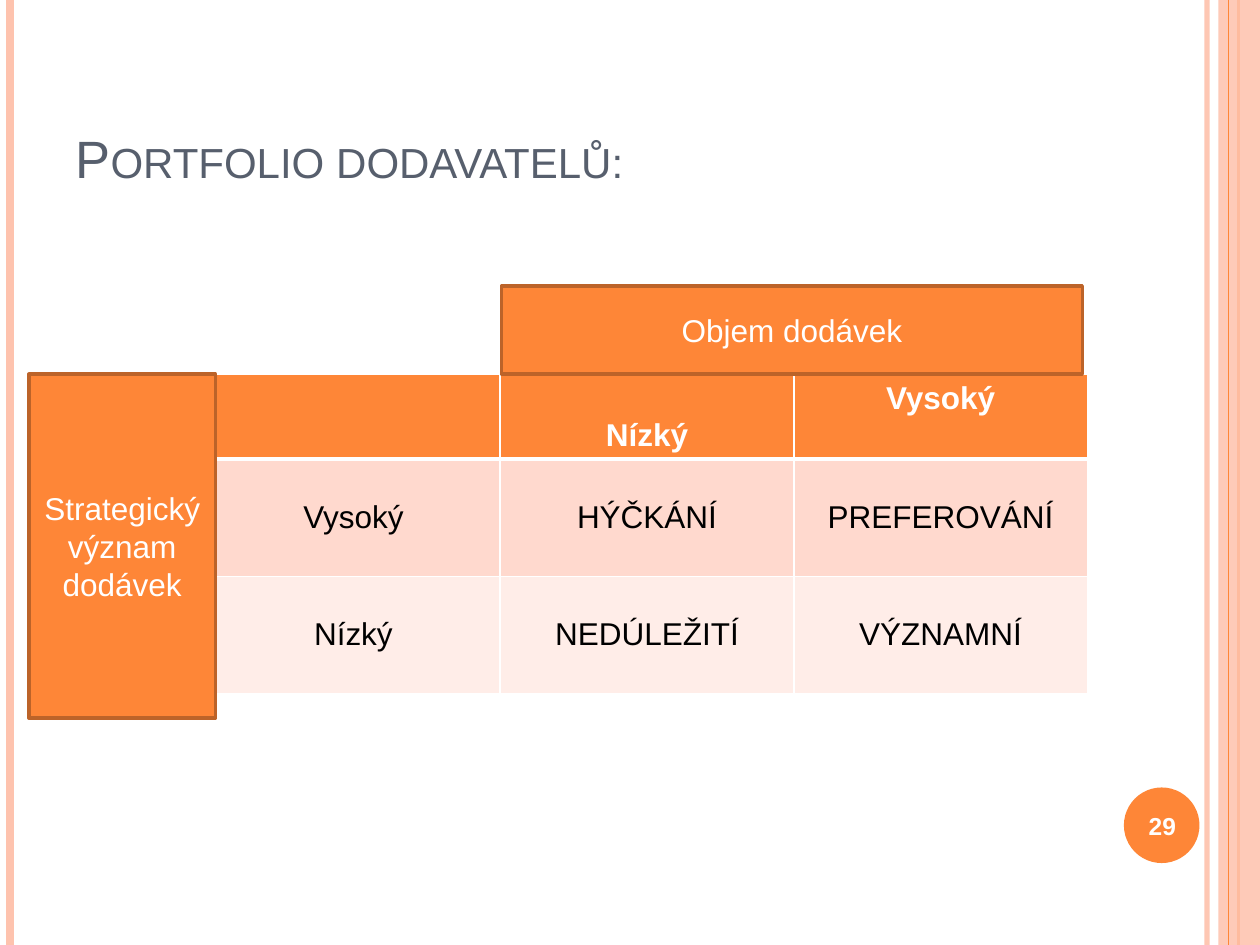
"""Build the supplier portfolio slide with its matrix and decorated margins."""
from lxml import etree
from pptx import Presentation
from pptx import util as u
from pptx.dml.color import RGBColor
from pptx.enum import shapes, text
from pptx.oxml.ns import qn

ORANGE = RGBColor(0xFE, 0x86, 0x37)
PEACH = RGBColor(0xFE, 0xC3, 0xAE)
BROWN = RGBColor(0xBC, 0x63, 0x29)
SLATE = RGBColor(0x57, 0x5F, 0x6D)
WHITE = RGBColor(0xFF, 0xFF, 0xFF)
BLACK = RGBColor(0, 0, 0)
BANDS = [ORANGE, RGBColor(0xFF, 0xD9, 0xCE), RGBColor(0xFF, 0xED, 0xE8)]

SLIDE_WIDTH, SLIDE_HEIGHT = 720, 540
TITLE = "Portfolio dodavatelů:"
MATRIX = [
    ["", "Nízký", "Vysoký"],
    ["Vysoký", "HÝČKÁNÍ", "PREFEROVÁNÍ"],
    ["Nízký", "NEDÚLEŽITÍ", "VÝZNAMNÍ"],
]
AXES = [
    ("Objem dodávek", (286.56, 163.44, 331.92, 50.4)),
    ("Strategický význam dodávek", (16.56, 213.84, 106.56, 196.56)),
]
BACK_STRIPES = [(689.76, PEACH, 3, 93), (5.76, PEACH, 4.5, 100), (707.76, ORANGE, 1.5, 100)]
FRONT_STRIPES = [(702, ORANGE, 0.75, 100)]
BAND = (696.24, 0, 23.76, SLIDE_HEIGHT)
BADGE = (642.24, 450, 43.2, 43.2)
PAGE_NUMBER = ("29", (640.08, 451.44, 48.24, 41.04))
TABLE_LEFT, TABLE_TOP, COLUMN_WIDTH = 118.08, 213.84, 167.76
ROW_HEIGHTS = [48.5, 67, 67]
TABLE_TEXT = {"size": u.Pt(18), "name": "Arial"}
AXIS_TEXT = {**TABLE_TEXT, "color": WHITE}


def points(values):
    return [u.Pt(value) for value in values]


def set_alpha(element, percent):
    color = element.find(".//" + qn("a:srgbClr"))
    etree.SubElement(color, qn("a:alpha")).set("val", str(percent * 1000))


def write(frame, words, style, align=text.PP_ALIGN.CENTER, anchor=text.MSO_ANCHOR.MIDDLE):
    frame.word_wrap = True
    frame.vertical_anchor = anchor
    para = frame.paragraphs[0]
    para.alignment = align
    span = para.add_run()
    span.text = words
    for name, value in style.items():
        if name == "color":
            span.font.color.rgb = value
        else:
            setattr(span.font, name, value)
    return span


def add_stripe(page, x, color, width, alpha):
    stripe = page.shapes.add_connector(
        shapes.MSO_CONNECTOR.STRAIGHT, *points((x, 0, x, SLIDE_HEIGHT)))
    stripe.line.color.rgb = color
    stripe.line.width = u.Pt(width)
    properties = stripe.element.spPr
    if alpha < 100:
        set_alpha(properties, alpha)
    etree.SubElement(properties, qn("a:effectLst"))


def add_box(page, kind, place, fill, outline=None):
    box = page.shapes.add_shape(kind, *points(place))
    box.shadow.inherit = False
    box.fill.solid()
    box.fill.fore_color.rgb = fill
    if outline is None:
        box.line.fill.background()
    else:
        box.line.color.rgb = outline
        box.line.width = u.Pt(2)
    return box


def border_cell(cell, bottom):
    properties = cell._tc.get_or_add_tcPr()
    sides = {"lnL": 1, "lnR": 1, "lnT": 1, "lnB": bottom}
    for position, (side, width) in enumerate(sides.items()):
        line = etree.Element(qn("a:" + side), w=str(u.Pt(width)))
        fill = etree.SubElement(line, qn("a:solidFill"))
        etree.SubElement(fill, qn("a:srgbClr")).set("val", str(WHITE))
        properties.insert(position, line)


def add_matrix(page):
    place = (TABLE_LEFT, TABLE_TOP, COLUMN_WIDTH * len(MATRIX[0]), sum(ROW_HEIGHTS))
    table = page.shapes.add_table(len(MATRIX), len(MATRIX[0]), *points(place)).table
    for column in table.columns:
        column.width = u.Pt(COLUMN_WIDTH)
    for r, (words_row, height, fill) in enumerate(zip(MATRIX, ROW_HEIGHTS, BANDS)):
        table.rows[r].height = u.Pt(height)
        header = r == 0
        style = {**TABLE_TEXT, "bold": header, "color": WHITE if header else BLACK}
        for c, words in enumerate(words_row):
            cell = table.cell(r, c)
            cell.fill.solid()
            cell.fill.fore_color.rgb = fill
            border_cell(cell, 3 if header else 1)
            if words:
                write(cell.text_frame, words, style)
            cell.vertical_anchor = text.MSO_ANCHOR.MIDDLE
    table.cell(0, 1).vertical_anchor = text.MSO_ANCHOR.BOTTOM
    table.cell(0, 2).vertical_anchor = text.MSO_ANCHOR.TOP


def add_title(page):
    title = page.shapes.title
    title.left, title.top, title.width, title.height = points((36, 21.6, 588.24, 90))
    style = {"size": u.Pt(30), "name": "Arial", "color": SLATE}
    span = write(title.text_frame, TITLE, style, text.PP_ALIGN.LEFT, text.MSO_ANCHOR.BOTTOM)
    span._r.get_or_add_rPr().set("cap", "small")


def main():
    deck = Presentation()
    deck.slide_width, deck.slide_height = points((SLIDE_WIDTH, SLIDE_HEIGHT))
    page = deck.slides.add_slide(deck.slide_layouts[5])
    rectangle, oval = shapes.MSO_SHAPE.RECTANGLE, shapes.MSO_SHAPE.OVAL
    for stripe in BACK_STRIPES:
        add_stripe(page, *stripe)
    set_alpha(add_box(page, rectangle, BAND, PEACH).element.spPr, 87)
    for stripe in FRONT_STRIPES:
        add_stripe(page, *stripe)
    add_box(page, oval, BADGE, ORANGE)
    add_title(page)
    add_matrix(page)
    for words, place in AXES:
        write(add_box(page, rectangle, place, ORANGE, BROWN).text_frame, words, AXIS_TEXT)
    number, place = PAGE_NUMBER
    box = page.shapes.add_textbox(*points(place))
    write(box.text_frame, number, {**AXIS_TEXT, "size": u.Pt(14), "bold": True})
    deck.save("out.pptx")


if __name__ == "__main__":
    main()
